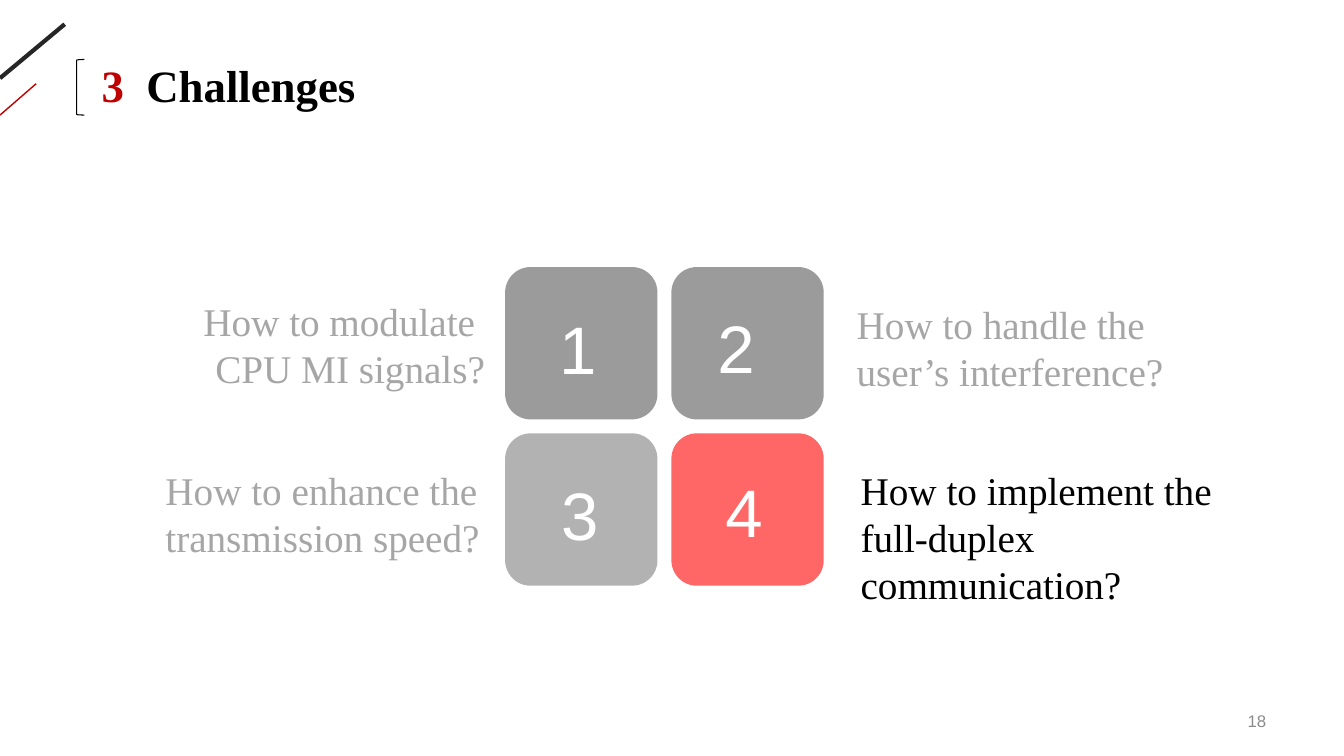
from lxml.etree import SubElement as Sub
from pptx import Presentation
from pptx.dml.color import RGBColor as RGB
from pptx.enum.shapes import MSO_CONNECTOR as Conn, MSO_SHAPE as Shape
from pptx.enum.text import MSO_ANCHOR as Anchor, PP_ALIGN as Align
from pptx.oxml.ns import qn
from pptx.util import Cm, Pt

HUES = {
    "white": "FFFFFF", "black": "000000", "dark": "595959", "mid": "808080",
    "hot": "FF0000", "faded": "A6A6A6", "ink": "262626", "red": "C00000",
    "page": "8C8C8C",
}
TILE, PITCH = 3.84, 4.19
LEFT, TOP = 12.73, 6.73

# Per tile: fill, number position, question box, question lines, text hue, alignment
ITEMS = [
    ("dark", (13.84, 7.62), (4.42, 7.19, 8.41, 3),
     ["How to modulate ", "CPU MI signals?"], "faded", Align.RIGHT),
    ("dark", (17.83, 7.59), (20.98, 7.26, 10.64, 3),
     ["How to handle the user’s interference?"], "faded", Align.LEFT),
    ("mid", (13.89, 11.81), (3.56, 11.46, 9.17, 3),
     ["How to enhance the transmission speed?"], "faded", Align.LEFT),
    ("hot", (18.03, 11.73), (21.08, 11.46, 11.99, 3.61),
     ["How to implement the full-duplex communication?"], "black", Align.LEFT),
]


class Deck:
    def __init__(self, font, serif):
        self.font, self.serif = font, serif
        self.prs = Presentation()
        self.prs.slide_width, self.prs.slide_height = Cm(33.87), Cm(19.05)
        self.slide = self.prs.slides.add_slide(self.prs.slide_layouts[6])

    def hue(self, name):
        return RGB.from_string(HUES[name])

    def text(self, box, paras, size, font=None, bold=False,
             align=Align.LEFT, anchor=Anchor.TOP, pad=(0.25, 0.13), tab=None):
        """Add a text box; each paragraph is a list of (words, hue) runs."""
        frame = self.slide.shapes.add_textbox(*map(Cm, box)).text_frame
        frame.word_wrap = True
        frame.vertical_anchor = anchor
        frame.margin_left = frame.margin_right = Cm(pad[0])
        frame.margin_top = frame.margin_bottom = Cm(pad[1])
        for i, runs in enumerate(paras):
            para = frame.add_paragraph() if i else frame.paragraphs[0]
            para.alignment = align
            if tab:
                tabs = Sub(para._p.get_or_add_pPr(), qn("a:tabLst"))
                Sub(tabs, qn("a:tab"), pos=str(Cm(tab)), algn="l")
            for words, hue in runs:
                run = para.add_run()
                run.text = words
                run.font.size, run.font.bold = Pt(size), bold
                run.font.name = font or self.font
                run.font.color.rgb = self.hue(hue)

    def tile(self, x, y, hue):
        """Add a rounded square at 60% opacity."""
        tile = self.slide.shapes.add_shape(
            Shape.ROUNDED_RECTANGLE, Cm(x), Cm(y), Cm(TILE), Cm(TILE))
        tile.shadow.inherit = False
        tile.fill.solid()
        tile.fill.fore_color.rgb = self.hue(hue)
        tile.line.fill.background()
        color = tile._element.spPr.find(".//" + qn("a:srgbClr"))
        Sub(color, qn("a:alpha"), val="60000")

    def line(self, ends, hue, width):
        line = self.slide.shapes.add_connector(Conn.STRAIGHT, *map(Cm, ends))
        line.line.color.rgb, line.line.width = self.hue(hue), Pt(width)
        Sub(line._element.spPr, qn("a:effectLst"))

    def bracket(self, box, hue, width):
        mark = self.slide.shapes.add_shape(Shape.LEFT_BRACKET, *map(Cm, box))
        mark.shadow.inherit = False
        mark.fill.background()
        mark.line.color.rgb, mark.line.width = self.hue(hue), Pt(width)


def main():
    deck = Deck("Arial", "Times New Roman")
    for i, (fill, spot, box, lines, hue, align) in enumerate(ITEMS):
        row, col = divmod(i, 2)
        deck.tile(LEFT + col * PITCH, TOP + row * PITCH, fill)
        deck.text((*spot, 1.47, 2.31), [[(str(i + 1), "white")]], 48)
        deck.text(box, [[(words, hue)] for words in lines], 28,
                  font=deck.serif, align=align, pad=(0.61, 0.3))

    deck.line((1.63, 0.61, 0, 1.97), "ink", 3)
    deck.line((0.91, 2.11, 0, 2.9), "red", 1)
    deck.bracket((1.93, 1.5, 0.2, 1.4), "black", 0.75)
    deck.text((2.31, 1.32, 7.2, 1.63), [[("3", "red"), ("\tChallenges", "black")]],
              32, font=deck.serif, bold=True, tab=1.13)
    deck.text((24.26, 17.65, 7.9, 1.02), [[("18", "page")]], 12,
              align=Align.RIGHT, anchor=Anchor.MIDDLE)
    deck.prs.save("out.pptx")


if __name__ == "__main__":
    main()
